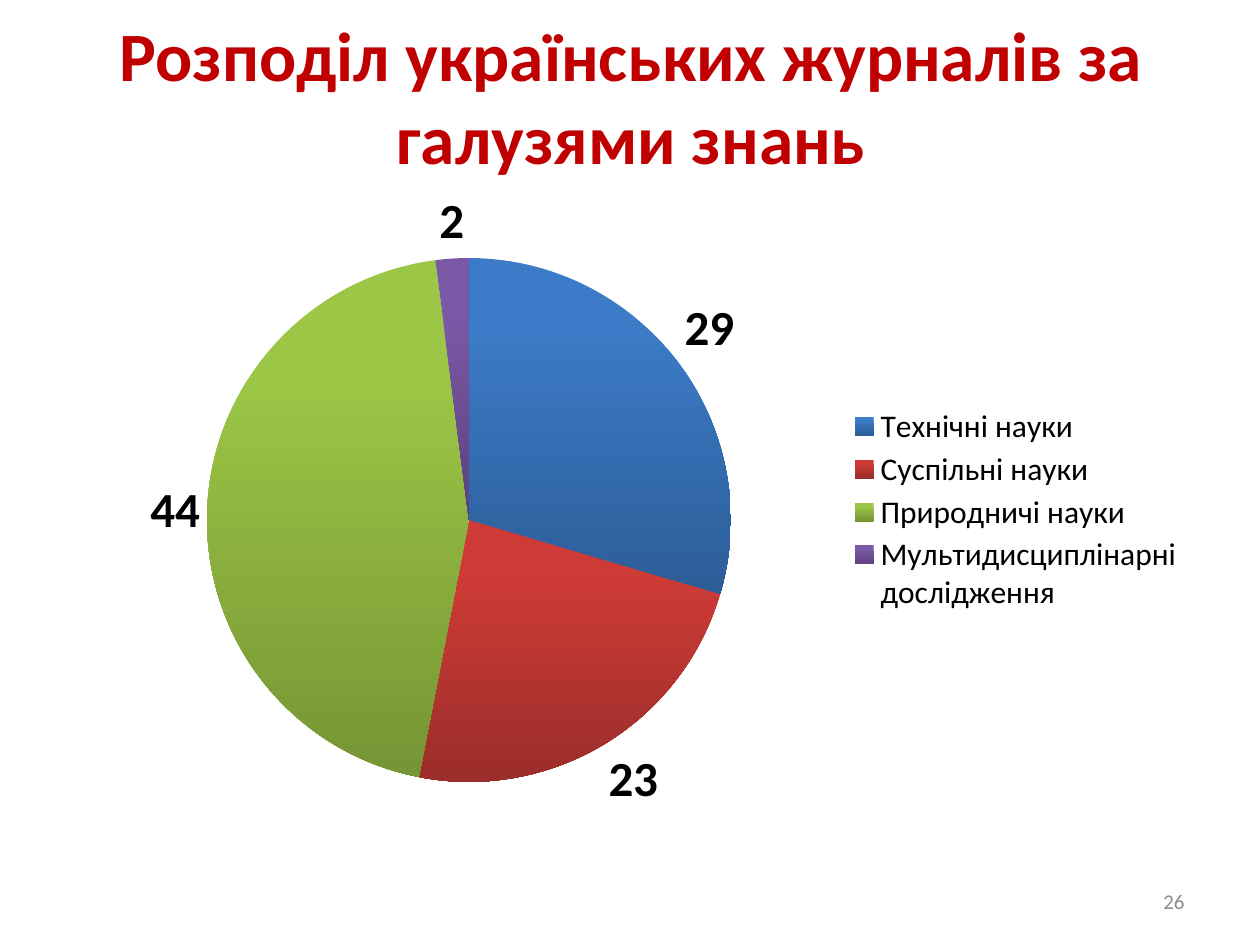
import pptx
import pptx.util
import pptx.chart.data
import pptx.dml.color
import pptx.enum.chart
import pptx.enum.text
import pptx.oxml
import pptx.oxml.ns

Inches, Pt = pptx.util.Inches, pptx.util.Pt
ALIGN = pptx.enum.text.PP_ALIGN

# Content
TITLE = "Розподіл українських журналів за галузями знань"
PAGE = "26"
FONT = "Calibri"
COLORS = {"title": "C00000", "page": "8C8C8C", "text": "000000"}
FIELDS = [  # name, journals, top colour, bottom colour
    ("Технічні науки", 29, "3C7BC7", "2C5D98"),
    ("Суспільні науки", 23, "CE3B37", "9B2D2A"),
    ("Природничі науки", 44, "9CC746", "769535"),
    ("Мультидисциплінарні дослідження", 2, "7B58A6", "5D417E"),
]
# Fractions of the chart area: left, top, width, height
PIE_AREA = (0.127, 0.124, 0.462, 0.783)
LEGEND_AREA = (0.69, 0.34, 0.3, 0.32)


def rgb(value):
    return pptx.dml.color.RGBColor.from_string(value)


def style(font, size, color, bold=False):
    font.name, font.size, font.bold = FONT, Pt(size), bold
    font.color.rgb = rgb(color)


def add_text(s, box, text, size, color, align, bold=False):
    tf = s.shapes.add_textbox(*map(Inches, box)).text_frame
    tf.word_wrap = True
    tf.vertical_anchor = pptx.enum.text.MSO_ANCHOR.MIDDLE
    tf.text = text
    p = tf.paragraphs[0]
    p.alignment = align
    style(p.runs[0].font, size, color, bold)


def place(element, index, area, inner=False):
    """Give a chart part a fixed place within the chart area."""
    for old in element.findall(pptx.oxml.ns.qn("c:layout")):
        element.remove(old)
    target = '<c:layoutTarget val="inner"/>' if inner else ""
    modes = '<c:xMode val="edge"/><c:yMode val="edge"/>'
    sizes = "".join(f'<c:{k} val="{v}"/>' for k, v in zip("xywh", area))
    element.insert(index, pptx.oxml.parse_xml(
        f'<c:layout {pptx.oxml.ns.nsdecls("c")}><c:manualLayout>'
        f'{target}{modes}{sizes}</c:manualLayout></c:layout>'))


def add_pie(s):
    data = pptx.chart.data.CategoryChartData()
    data.categories = [field[0] for field in FIELDS]
    data.add_series("Series 1", [field[1] for field in FIELDS])
    chart = s.shapes.add_chart(
        pptx.enum.chart.XL_CHART_TYPE.PIE,
        *map(Inches, (0.5, 1.39, 9, 5.31)), data).chart
    chart.has_title = False
    style(chart.font, 18, COLORS["text"])

    # Legend
    chart.has_legend = True
    legend = chart.legend
    legend.position = pptx.enum.chart.XL_LEGEND_POSITION.RIGHT
    legend.include_in_layout = False
    style(legend.font, 18, COLORS["text"])

    # Slices, light at the top and dark at the bottom
    plot = chart.plots[0]
    plot.vary_by_categories = True
    for i, (_, _, top, bottom) in enumerate(FIELDS):
        fill = plot.series[0].points[i].format.fill
        fill.gradient()
        fill.gradient_angle = 270
        for stop, color, position in zip(fill.gradient_stops, (top, bottom), (0.2, 1)):
            stop.color.rgb = rgb(color)
            stop.position = position

    # Value labels
    plot.has_data_labels = True
    labels = plot.data_labels
    labels.show_value = True
    labels.show_percentage = False
    labels.position = pptx.enum.chart.XL_LABEL_POSITION.OUTSIDE_END
    style(labels.font, 28, COLORS["text"], True)

    plot_area = chart.element.find(".//" + pptx.oxml.ns.qn("c:plotArea"))
    place(plot_area, 0, PIE_AREA, inner=True)
    place(chart.element.find(".//" + pptx.oxml.ns.qn("c:legend")), 1, LEGEND_AREA)


def main():
    prs = pptx.Presentation()
    prs.slide_width, prs.slide_height = Inches(10), Inches(7.5)
    s = prs.slides.add_slide(prs.slide_layouts[6])
    add_text(s, (0.51, 0.13, 9, 1.25), TITLE, 39.6, COLORS["title"], ALIGN.CENTER, True)
    add_pie(s)
    add_text(s, (7.17, 6.95, 2.33, 0.4), PAGE, 12, COLORS["page"], ALIGN.RIGHT)
    prs.save("out.pptx")


if __name__ == "__main__":
    main()
